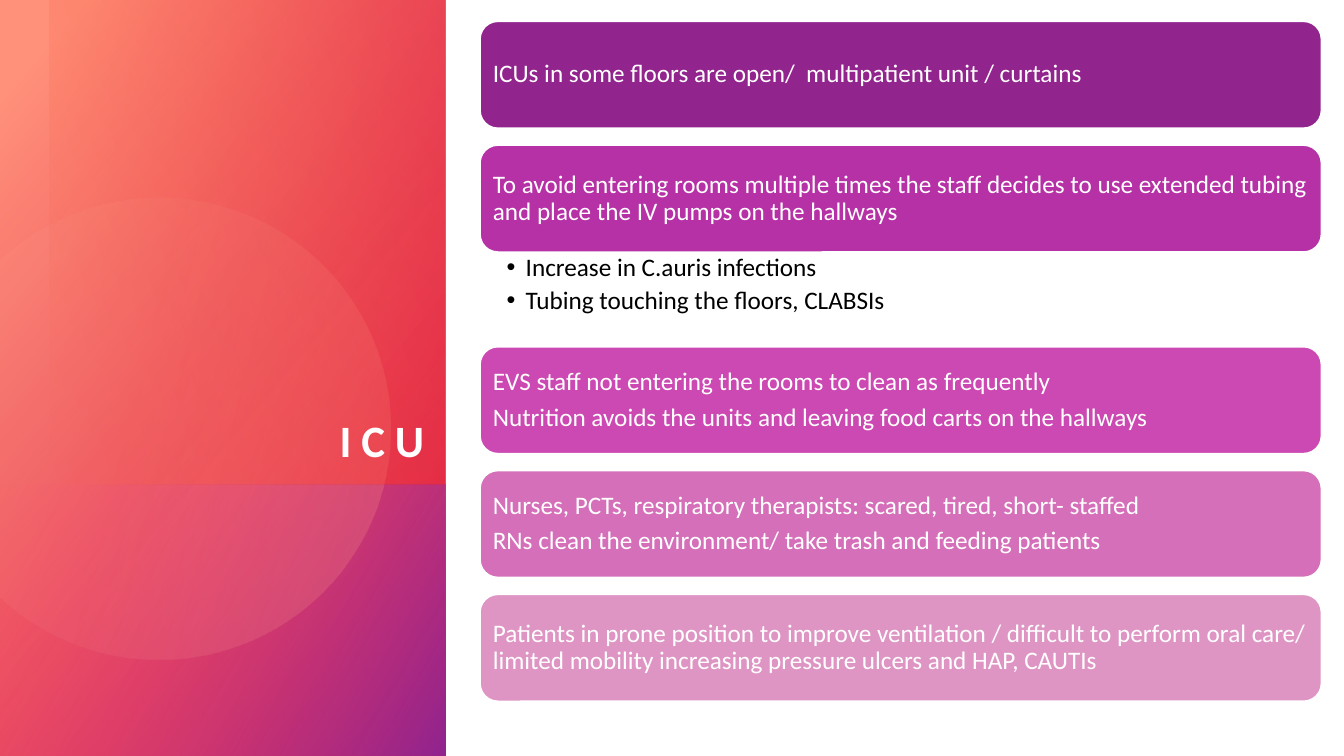
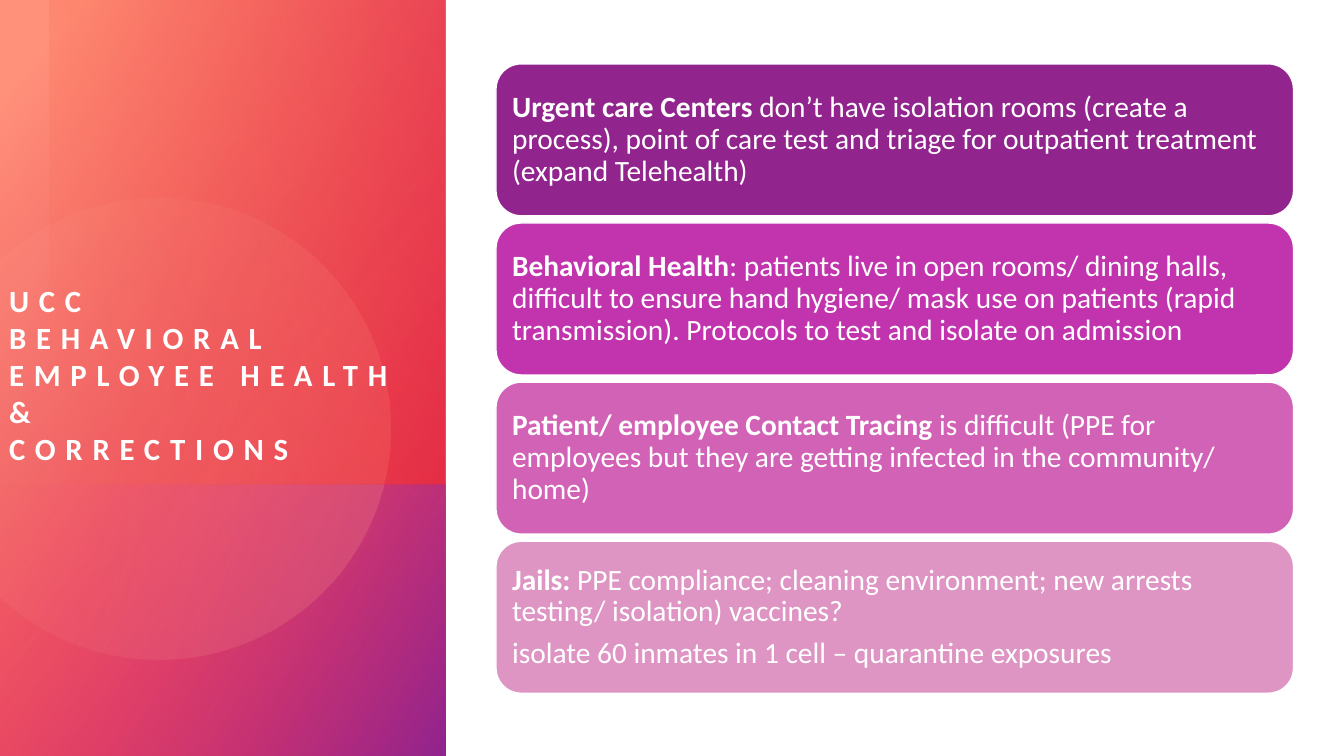
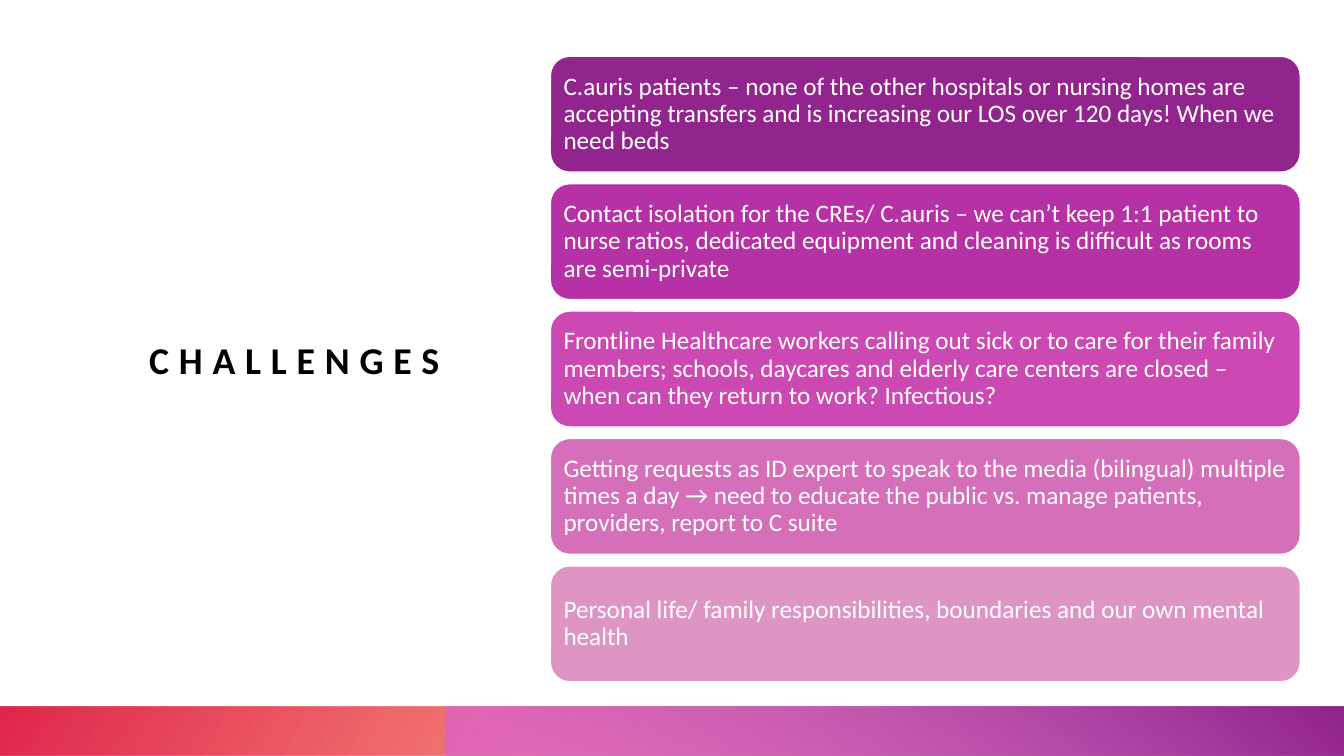
"""Build three slides on hospital unit challenges with stacked cards."""
import math
from dataclasses import dataclass

from lxml import etree
from pptx import Presentation
from pptx.dml.color import RGBColor
from pptx.enum import shapes, text
from pptx.oxml.ns import qn
from pptx.util import Cm, Pt


@dataclass(frozen=True)
class Theme:
    font: str = "Calibri"
    white: str = "FFFFFF"
    black: str = "000000"
    four_cards: tuple = ("92248E", "C134AD", "D262B6", "DE95C4")
    five_cards: tuple = ("92248E", "B630A6", "CC48B2", "D56FB9", "DE95C4")
    title_spacing: int = 700
    card_spacing: float = 0.9


THEME = Theme()
WIDTH, HEIGHT = 33.87, 19.05
PANEL_WIDTH = 11.22

PANEL = [
    ((0, 0, PANEL_WIDTH, HEIGHT), 40, [(8, "FF907A", 100), (100, "DA002F", 89)]),
    ((0, 12.21, PANEL_WIDTH, 6.84), 30, [(0, "FF5076", 0), (99, "92248E", 100)]),
]
PANEL_GLOW = ((1.26, 0, 9.96, 12.21), 160, [(0, "DA002F", 29), (100, "FE4A00", 0)])
CIRCLE = {"center": (4.0, 10.8), "radius": 5.83, "angle": 14,
          "stops": [(36, "FFBCAF", 6), (100, "FF907A", 26)]}
FOOTER = [
    ((0, 17.8, WIDTH, 1.25), 210, [(14, "FE4A00", 28), (100, "DA002F", 85)]),
    ((PANEL_WIDTH, 17.8, WIDTH - PANEL_WIDTH, 1.25), 310,
     [(9, "D861D4", 68), (99, "92248E", 100)]),
]

SLIDES = [
    {
        "panel": True,
        "title": {"text": "ICU", "box": (1.27, 2.41, 9.42, 9.35), "size": 32,
                  "color": THEME.white, "align": text.PP_ALIGN.RIGHT,
                  "anchor": text.MSO_ANCHOR.BOTTOM},
        "stack": {"left": 12.1, "top": 0.54, "width": 21.2, "height": 2.69,
                  "gap": 0.43, "size": 18, "inset": 0.19, "after": 6},
        "colors": THEME.five_cards,
        "cards": [
            [("ICUs in some floors are open/  multipatient unit / curtains",)],
            [("To avoid entering rooms multiple times the staff decides to use extended "
              "tubing and place the IV pumps on the hallways",)],
            [("EVS staff not entering the rooms to clean as frequently",),
             ("Nutrition avoids the units and leaving food carts on the hallways",)],
            [("Nurses, PCTs, respiratory therapists: scared, tired, short- staffed",),
             ("RNs clean the environment/ take trash and feeding patients",)],
            [("Patients in prone position to improve ventilation / difficult to perform "
              "oral care/ limited mobility increasing pressure ulcers and HAP, CAUTIs",)],
        ],
        "details": {1: {"height": 2.39, "items": [("Increase in C.auris infections",),
                                                  ("Tubing touching the floors, CLABSIs",)]}},
    },
    {
        "panel": True,
        "title": {"text": "UCC\vBEHAVIORAL EMPLOYEE HEALTH &\vCORRECTIONS",
                  "box": (0.23, 2.41, 11, 9.35), "size": 22, "color": THEME.white,
                  "align": text.PP_ALIGN.LEFT, "anchor": text.MSO_ANCHOR.BOTTOM},
        "stack": {"left": 12.5, "top": 1.61, "width": 20.1, "height": 3.83,
                  "gap": 0.18, "size": 21, "inset": 0.22, "after": 7},
        "colors": THEME.four_cards,
        "cards": [
            [("Urgent care Centers ", "don’t have isolation rooms (create a process), point "
              "of care test and triage for outpatient treatment (expand Telehealth)")],
            [("Behavioral Health", ": patients live in open rooms/ dining halls, difficult "
              "to ensure hand hygiene/ mask use on patients (rapid transmission). "
              "Protocols to test and isolate on admission")],
            [("Patient/ employee Contact Tracing", " is difficult (PPE for employees but "
              "they are getting infected in the community/ home)")],
            [("Jails:", " PPE compliance; cleaning environment; new arrests testing/ "
              "isolation) vaccines?"),
             ("isolate 60 inmates in 1 cell – quarantine exposures",)],
        ],
        "details": {},
    },
    {
        "panel": False,
        "title": {"text": "CHALLENGES", "box": (3.76, 2.84, 9.25, 12.42), "size": 27,
                  "color": THEME.black, "align": text.PP_ALIGN.LEFT,
                  "anchor": text.MSO_ANCHOR.MIDDLE},
        "stack": {"left": 13.87, "top": 1.42, "width": 18.9, "height": 2.92,
                  "gap": 0.29, "size": 18, "inset": 0.19, "after": 6},
        "colors": THEME.five_cards,
        "cards": [
            [("C.auris patients – none of the other hospitals or nursing homes are accepting "
              "transfers and is increasing our LOS over 120 days! When we need beds",)],
            [("Contact isolation for the CREs/ C.auris – we can’t keep 1:1 patient to nurse "
              "ratios, dedicated equipment and cleaning is difficult as rooms are "
              "semi-private",)],
            [("Frontline Healthcare workers calling out sick or to care for their family "
              "members; schools, daycares and elderly care centers are closed – when can "
              "they return to work? Infectious?",)],
            [("Getting requests as ID expert to speak to the media (bilingual) multiple times "
              "a day → need to educate the public vs. manage patients, providers, report to "
              "C suite",)],
            [("Personal life/ family responsibilities, boundaries and our own mental "
              "health",)],
        ],
        "details": {},
    },
]


def lengths(box):
    return [Cm(value) for value in box]


def fill_gradient(shape, angle, stops):
    shape.shadow.inherit = False
    shape.line.fill.background()
    shape.fill.background()
    properties = shape.fill._xPr
    gradient = etree.Element(qn("a:gradFill"), rotWithShape="1")
    stop_list = etree.SubElement(gradient, qn("a:gsLst"))
    for position, color, alpha in stops:
        stop = etree.SubElement(stop_list, qn("a:gs"), pos=str(position * 1000))
        rgb = etree.SubElement(stop, qn("a:srgbClr"), val=color)
        etree.SubElement(rgb, qn("a:alpha"), val=str(alpha * 1000))
    etree.SubElement(gradient, qn("a:lin"), ang=str(angle * 60000), scaled="0")
    properties.replace(properties.find(qn("a:noFill")), gradient)


def add_gradient_block(slide, box, angle, stops):
    block = slide.shapes.add_shape(shapes.MSO_SHAPE.RECTANGLE, *lengths(box))
    fill_gradient(block, angle, stops)


def add_cut_circle(slide, center, radius, angle, stops):
    limit = math.acos(-center[0] / radius)
    steps = 90
    turns = [limit * (2 * step / steps - 1) for step in range(steps + 1)]
    points = [(Cm(max(0, center[0] + radius * math.cos(turn))),
               Cm(center[1] + radius * math.sin(turn))) for turn in turns]
    builder = slide.shapes.build_freeform(*points[0])
    builder.add_line_segments(points[1:], close=True)
    fill_gradient(builder.convert_to_shape(), angle, stops)


def format_run(run, size, color, bold=False):
    run.font.name = THEME.font
    run.font.size = Pt(size)
    run.font.bold = bold
    run.font.color.rgb = RGBColor.from_string(color)


def prepare_frame(frame, anchor, insets=(0, 0, 0, 0)):
    frame.word_wrap = True
    frame.vertical_anchor = anchor
    (frame.margin_left, frame.margin_top,
     frame.margin_right, frame.margin_bottom) = lengths(insets)


def write_paragraphs(frame, paragraphs, size, color, after):
    for index, pieces in enumerate(paragraphs):
        paragraph = frame.add_paragraph() if index else frame.paragraphs[0]
        paragraph.alignment = text.PP_ALIGN.LEFT
        paragraph.line_spacing = THEME.card_spacing
        paragraph.space_after = Pt(after)
        for order, piece in enumerate(pieces):
            run = paragraph.add_run()
            run.text = piece
            format_run(run, size, color, bold=order == 0 and len(pieces) > 1)


def add_title(slide, title):
    frame = slide.shapes.add_textbox(*lengths(title["box"])).text_frame
    prepare_frame(frame, title["anchor"])
    frame.text = title["text"]
    frame.paragraphs[0].alignment = title["align"]
    for run in frame.paragraphs[0].runs:
        format_run(run, title["size"], title["color"], bold=True)
        run.font._element.set("spc", str(THEME.title_spacing))


def add_card(slide, box, color, paragraphs, stack):
    card = slide.shapes.add_shape(shapes.MSO_SHAPE.ROUNDED_RECTANGLE, *lengths(box))
    card.shadow.inherit = False
    card.fill.solid()
    card.fill.fore_color.rgb = RGBColor.from_string(color)
    card.line.color.rgb = RGBColor.from_string(THEME.white)
    card.line.width = Pt(1)
    prepare_frame(card.text_frame, text.MSO_ANCHOR.MIDDLE, [stack["inset"]] * 4)
    write_paragraphs(card.text_frame, paragraphs, stack["size"], THEME.white, stack["after"])


def add_bullets(slide, box, items, size):
    frame = slide.shapes.add_textbox(*lengths(box)).text_frame
    prepare_frame(frame, text.MSO_ANCHOR.TOP, (0.67, 0.08, 0.36, 0.08))
    write_paragraphs(frame, items, size, THEME.black, 3.5)
    for paragraph in frame.paragraphs:
        properties = paragraph._p.get_or_add_pPr()
        properties.set("marL", str(Cm(0.48)))
        properties.set("indent", str(-Cm(0.48)))
        etree.SubElement(properties, qn("a:buFont"), typeface="Arial")
        etree.SubElement(properties, qn("a:buChar"), char="•")


def add_stack(slide, content):
    stack = content["stack"]
    left, width, height = stack["left"], stack["width"], stack["height"]
    top = stack["top"]
    for index, (paragraphs, color) in enumerate(zip(content["cards"], content["colors"])):
        add_card(slide, (left, top, width, height), color, paragraphs, stack)
        top += height
        detail = content["details"].get(index)
        if detail:
            add_bullets(slide, (left, top, width, detail["height"]),
                        detail["items"], stack["size"])
        top += detail["height"] if detail else stack["gap"]


def add_background(slide, has_panel):
    for block in PANEL if has_panel else FOOTER:
        add_gradient_block(slide, *block)
    if has_panel:
        add_cut_circle(slide, **CIRCLE)
        add_gradient_block(slide, *PANEL_GLOW)


def main():
    presentation = Presentation()
    presentation.slide_width, presentation.slide_height = Cm(WIDTH), Cm(HEIGHT)
    for content in SLIDES:
        slide = presentation.slides.add_slide(presentation.slide_layouts[6])
        add_background(slide, content["panel"])
        add_title(slide, content["title"])
        add_stack(slide, content)
    presentation.save("out.pptx")


if __name__ == "__main__":
    main()
